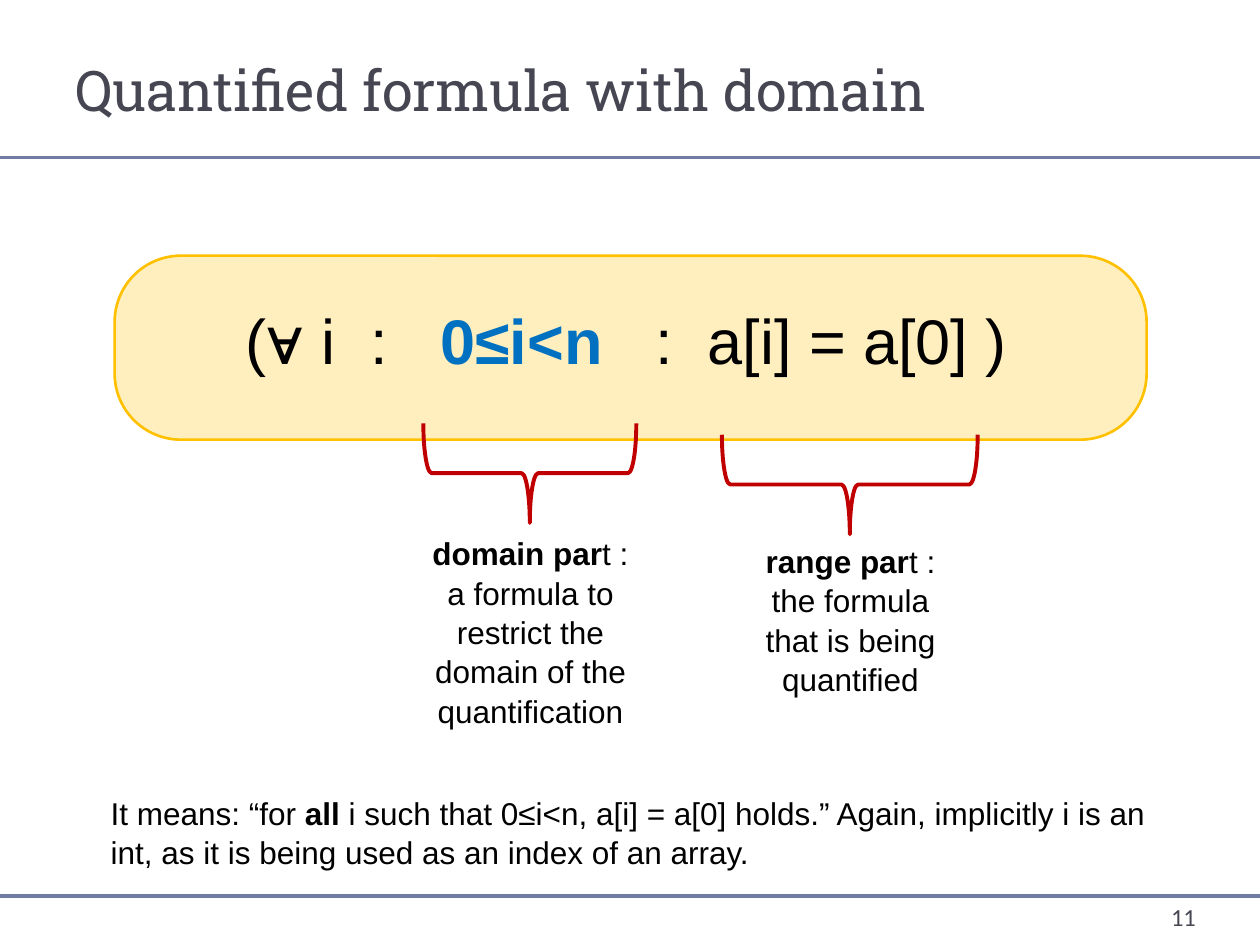
from lxml.etree import SubElement
from pptx import Presentation
from pptx.dml.color import RGBColor
from pptx.enum.shapes import MSO_CONNECTOR, MSO_SHAPE
from pptx.enum.text import MSO_ANCHOR, PP_ALIGN
from pptx.oxml.ns import qn
from pptx.util import Inches, Pt

WIDTH, HEIGHT = Inches(10), Inches(7.5)
COL, ROW = WIDTH / 100, HEIGHT / 75

BLACK = RGBColor(0x00, 0x00, 0x00)
SLATE = RGBColor(0x46, 0x46, 0x53)
RULE = RGBColor(0x72, 0x7C, 0xA3)
AMBER = RGBColor(0xFF, 0xC0, 0x00)
BLUE = RGBColor(0x00, 0x70, 0xC0)
RED = RGBColor(0xC0, 0x00, 0x00)


def place(x, y, w, h):
    """Turn a box in grid columns and rows into lengths."""
    return round(x * COL), round(y * ROW), round(w * COL), round(h * ROW)


def add_text(s, box, runs, size, font="Arial", align=PP_ALIGN.LEFT,
             anchor=MSO_ANCHOR.TOP, wrap=True, spacing=1.0):
    """Write one paragraph of (text, colour, bold) runs in a box."""
    tf = s.shapes.add_textbox(*place(*box)).text_frame
    tf.word_wrap = wrap
    tf.vertical_anchor = anchor
    p = tf.paragraphs[0]
    p.alignment = align
    p.line_spacing = spacing
    for text, color, bold in runs:
        r = p.add_run()
        r.text = text
        r.font.name, r.font.size, r.font.bold = font, Pt(size), bold
        r.font.color.rgb = color


def add_rule(s, y):
    """Draw a full-width rule at a grid row."""
    line = s.shapes.add_connector(
        MSO_CONNECTOR.STRAIGHT, 0, round(y * ROW), WIDTH, round(y * ROW))
    line.line.color.rgb = RULE
    line.line.width = Pt(2.25)
    SubElement(line._element.spPr, qn("a:effectLst"))


def add_header(s, box, title):
    """Place the title and the rule below it."""
    x, y, w, h = box
    add_text(s, (x, y, w, h - 2.3), [(title, SLATE, False)], 32,
             font="Roboto Slab", anchor=MSO_ANCHOR.BOTTOM)
    add_rule(s, y + h)


def add_footer(s, box, number):
    """Place the bottom rule and the slide number."""
    add_rule(s, box[1])
    add_text(s, box, [(number, SLATE, False)], 14, font="Calibri",
             align=PP_ALIGN.RIGHT)


def add_formula(s, box, runs):
    """Place the rounded panel with the formula inside it."""
    x, y, w, h = box
    sp = s.shapes.add_shape(MSO_SHAPE.ROUNDED_RECTANGLE, *place(*box))
    sp.shadow.inherit = False
    sp.adjustments[0] = 0.36
    sp.fill.solid()
    sp.fill.fore_color.rgb = AMBER
    color = sp._element.spPr.find(qn("a:solidFill")).find(qn("a:srgbClr"))
    SubElement(color, qn("a:alpha"), val="25000")
    sp.line.color.rgb = AMBER
    sp.line.width = Pt(1.5)
    add_text(s, (x + 9.4, y + 3.1, w - 18.8, 7.1), runs, 36, wrap=False)


def add_callout(s, box, label_gap, label_height, term, meaning):
    """Place a downward brace filling the box and its label beneath."""
    x, y, w, h = box
    cx, cy = x + w / 2, y + h / 2
    sp = s.shapes.add_shape(
        MSO_SHAPE.LEFT_BRACE, *place(cx - h / 2, cy - w / 2, h, w))
    sp.rotation = 270
    sp.shadow.inherit = False
    sp.fill.background()
    sp.line.color.rgb = RED
    sp.line.width = Pt(2.25)
    add_text(s, (cx - 9, y + h + label_gap, 18.1, label_height),
             [(term, BLACK, True), (meaning, BLACK, False)], 18,
             align=PP_ALIGN.CENTER, spacing=1.04)


def main():
    """Build and save the slide."""
    prs = Presentation()
    prs.slide_width, prs.slide_height = WIDTH, HEIGHT
    s = prs.slides.add_slide(prs.slide_layouts[6])
    add_header(s, (5, 1.7, 90, 10.8), "Quantified formula with domain")
    add_footer(s, (74.2, 71.1, 21.7, 4), "11")
    add_formula(s, (9.1, 20.3, 81.9, 14.6), [
        ("(∀ i  :   ", BLACK, False),
        ("0≤i<n   ", BLUE, True),
        (":  a[i] = a[0] )", BLACK, False)])
    add_callout(s, (33.6, 33.6, 16.9, 7.9), 0.3, 16.2, "domain par",
                "t : a formula to restrict the domain of the quantification")
    add_callout(s, (57.3, 34.5, 20.3, 7.9), 0, 13.1, "range par",
                "t : the formula that is being quantified")
    add_text(s, (7.8, 62.4, 86.3, 7.1), [
        ("It means: “for ", BLACK, False),
        ("all ", BLACK, True),
        ("i such that 0≤i<n, a[i] = a[0] holds.” Again, implicitly i is an "
         "int, as it is being used as an index of an array.", BLACK, False)],
        18, spacing=1.04)
    prs.save("out.pptx")


if __name__ == "__main__":
    main()
